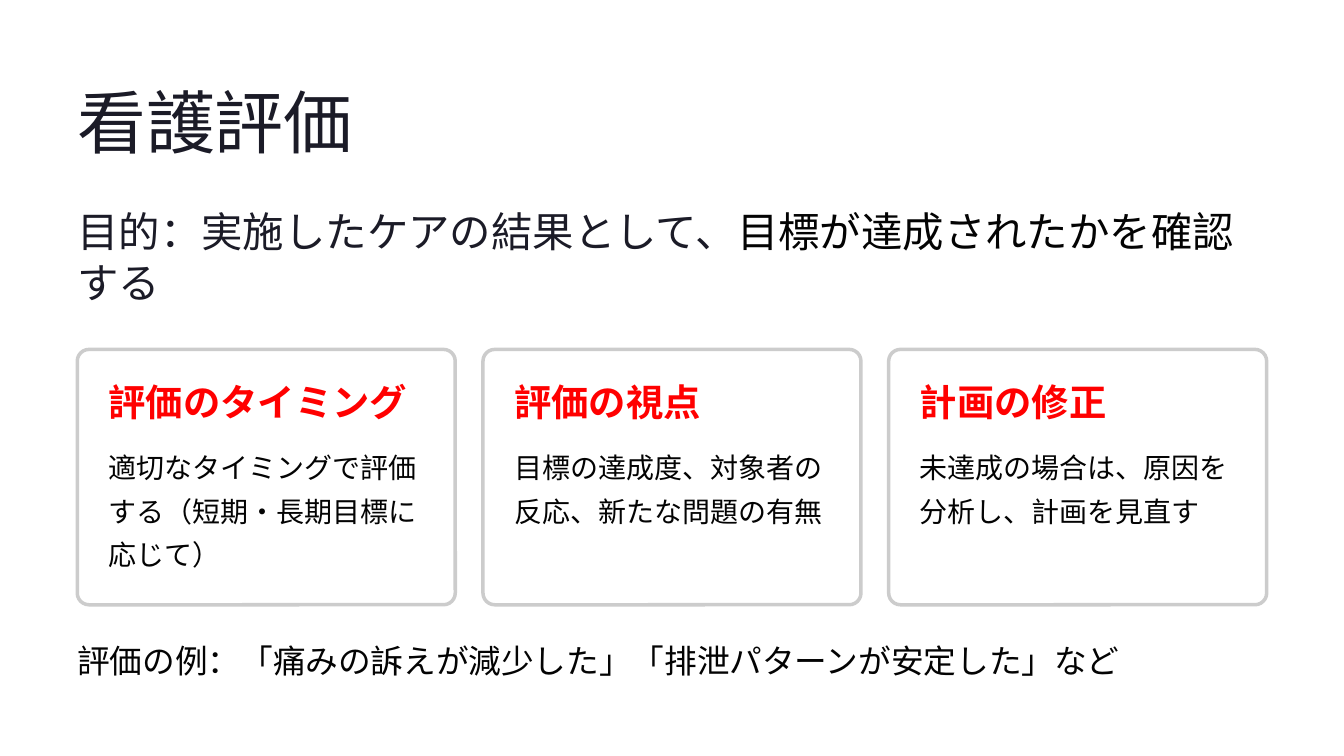
from lxml import etree
from pptx import Presentation
from pptx import util as u
from pptx.dml.color import RGBColor
from pptx.enum import shapes, text
from pptx.oxml.ns import qn

COLORS = {
    "ink": "1B1B27",
    "body": "030303",
    "accent": "FF0000",
    "card": "FFFFFF",
    "border": "CCCCCC",
}
HEADING_FONT = "Inter"
BODY_FONT = "Cabin"

LEFT = 0.92
CONTENT_WIDTH = 14.15
CARD_TOP, CARD_WIDTH, CARD_HEIGHT = 4.16, 4.5, 3.04
CARD_STEP = 4.83
CARD_PADDING = 0.37

CARDS = [
    ("評価のタイミング", "適切なタイミングで評価する（短期・長期目標に応じて）"),
    ("評価の視点", "目標の達成度、対象者の反応、新たな問題の有無"),
    ("計画の修正", "未達成の場合は、原因を分析し、計画を見直す"),
]


def color(name):
    return RGBColor.from_string(COLORS[name])


def add_text(page, left, top, width, height, spans, size, font, leading, bold=False):
    """Add one paragraph made of (wording, colour name) spans."""
    box = page.shapes.add_textbox(
        u.Inches(left), u.Inches(top), u.Inches(width), u.Inches(height))
    frame = box.text_frame
    frame.word_wrap = True
    frame.vertical_anchor = text.MSO_ANCHOR.TOP
    frame.margin_left = frame.margin_right = 0
    frame.margin_top = frame.margin_bottom = 0
    para = frame.paragraphs[0]
    para.line_spacing = u.Pt(leading)
    for wording, color_name in spans:
        span = para.add_run()
        span.text = wording
        span.font.name = font
        span.font.size = u.Pt(size)
        span.font.bold = bold
        span.font.color.rgb = color(color_name)


def add_panel(page, left):
    """Add the rounded, slightly transparent background of a card."""
    panel = page.shapes.add_shape(
        shapes.MSO_SHAPE.ROUNDED_RECTANGLE,
        u.Inches(left), u.Inches(CARD_TOP),
        u.Inches(CARD_WIDTH), u.Inches(CARD_HEIGHT))
    panel.adjustments[0] = 0.046
    panel.shadow.inherit = False
    panel.fill.solid()
    panel.fill.fore_color.rgb = color("card")
    fill_color = panel.fill._xPr.find(qn("a:solidFill"))[0]
    etree.SubElement(fill_color, qn("a:alpha"), val="95000")
    panel.line.color.rgb = color("border")
    panel.line.width = u.Pt(3)


def add_card(page, left, heading, body):
    add_panel(page, left)
    inner_left = left + CARD_PADDING
    inner_width = CARD_WIDTH - 2 * CARD_PADDING
    add_text(page, inner_left, CARD_TOP + CARD_PADDING, inner_width, 0.51,
             [(heading, "accent")], 32, HEADING_FONT, 37, bold=True)
    add_text(page, inner_left, CARD_TOP + 1.08, inner_width, 1.58,
             [(body, "body")], 24, BODY_FONT, 37.5)


def main():
    deck = Presentation()
    deck.slide_width = u.Inches(16)
    deck.slide_height = u.Inches(9)
    page = deck.slides.add_slide(deck.slide_layouts[6])

    # Title and purpose
    add_text(page, LEFT, 0.91, 8.24, 1.03,
             [("看護評価", "ink")], 59, HEADING_FONT, 74)
    purpose = [
        ("目的：実施したケアの結果として、", "ink"),
        ("目標が達成されたかを確認", "body"),
        ("する", "ink"),
    ]
    add_text(page, LEFT, 2.43, CONTENT_WIDTH, 1.24, purpose, 35.5, HEADING_FONT, 44)

    # Three cards
    for index, (heading, body) in enumerate(CARDS):
        add_card(page, LEFT + index * CARD_STEP, heading, body)

    # Examples
    add_text(page, LEFT, 7.57, CONTENT_WIDTH, 0.53,
             [("評価の例：「痛みの訴えが減少した」「排泄パターンが安定した」など", "body")],
             28, BODY_FONT, 37.5)

    deck.save("out.pptx")


if __name__ == "__main__":
    main()
